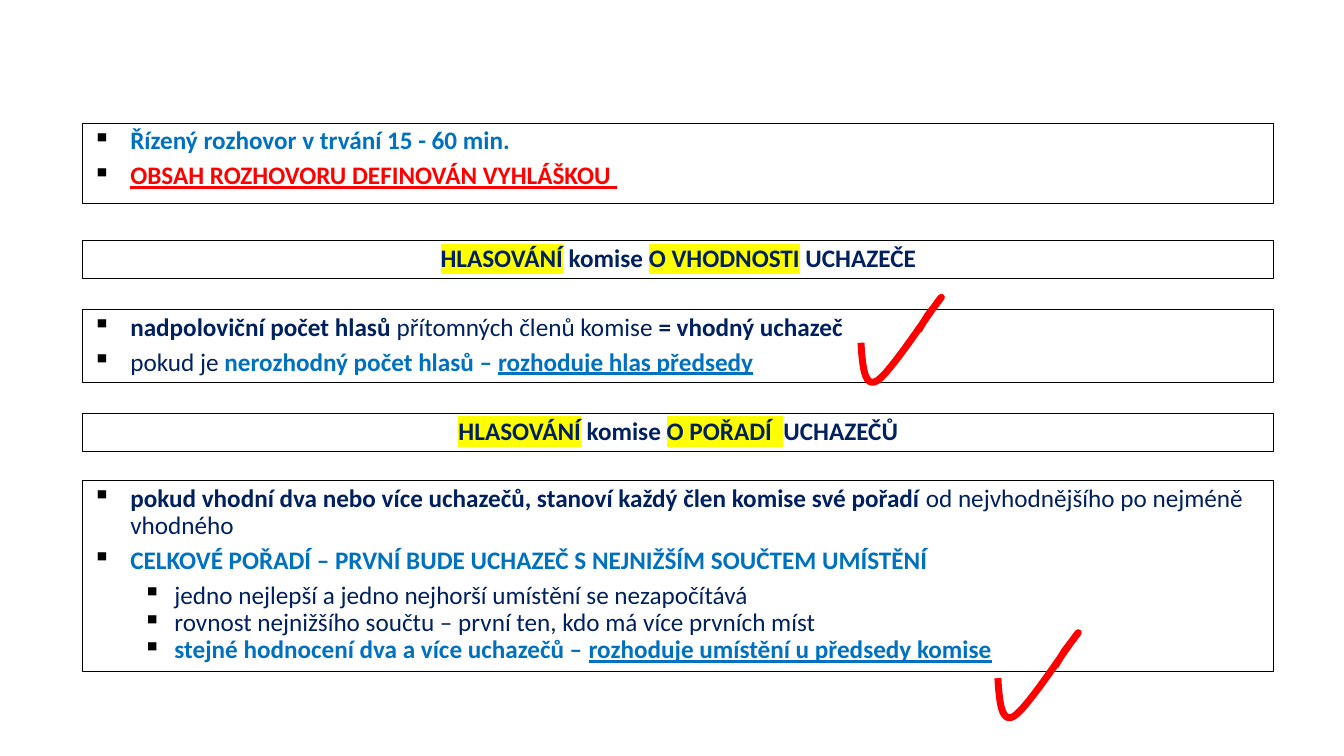
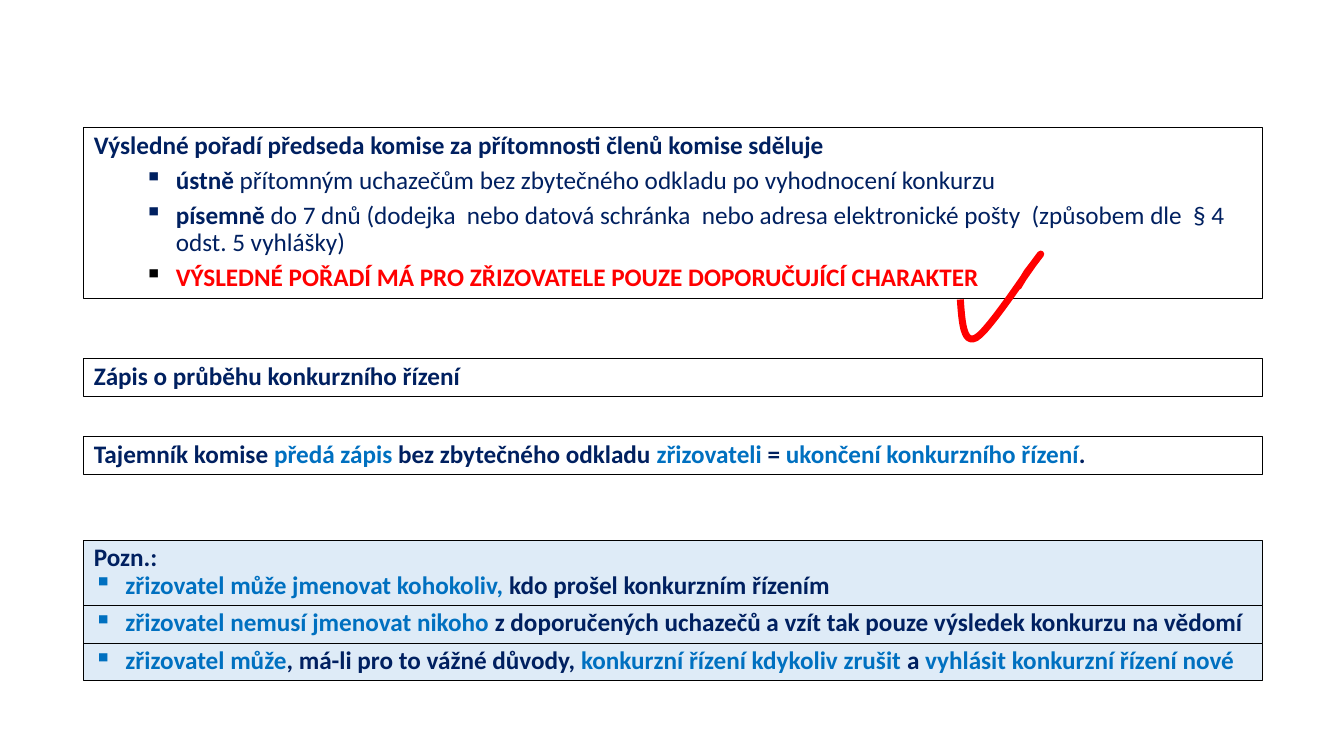
from lxml import etree
from pptx import Presentation
from pptx import util as u
from pptx.dml.color import RGBColor
from pptx.enum import shapes, text
from pptx.oxml.ns import qn

Pt = u.Pt
FONT = "Calibri"
COLORS = {
    "navy": "002060", "blue": "0070C0", "red": "FF0000", "black": "000000",
    "white": "FFFFFF", "pale": "DEEBF7", "yellow": "FFFF00",
}

# Run styles: colour, highlight and font attributes
STYLES = {
    "plain": ("navy", None, {"bold": False}),
    "bold": ("navy", None, {"bold": True}),
    "marked": ("navy", "yellow", {"bold": True}),
    "blue": ("blue", None, {"bold": True}),
    "blue_line": ("blue", None, {"bold": True, "underline": True}),
    "red": ("red", None, {"bold": True}),
    "red_line": ("red", None, {"bold": True, "underline": True}),
}

# Paragraph kinds: level, left margin, hanging indent, bullet colour
KINDS = {
    "text": (0, 0, 0, None),
    "centred": (0, 0, 0, None),
    "bullet": (0, 27, 27, "black"),
    "sub": (1, 58.5, 22.5, None),
    "sub_black": (1, 58.5, 22.5, "black"),
    "note": (0, 22.5, 22.5, None),
}
GAP = 5.5        # space between separated paragraphs
ROW = 27         # height of a one-line box

# Check mark outline, relative to its top left corner
TICK_START = (0, 32.4)
TICK_CURVES = [
    ((1.1, 48.6), (2.2, 64.6), (11.2, 59.8)),
    ((20.5, 54.7), (49.8, 9.4), (56, 1.7)),
    ((61.9, -5.8), (47.5, 13), (47.5, 13)),
]
TICK_END = (41, 23.8)


def rgb(name):
    return RGBColor.from_string(COLORS[name])


def set_all(target, values):
    for name, value in values.items():
        setattr(target, name, value)


def add_color(parent, tag, name):
    holder = etree.SubElement(parent, qn(tag))
    etree.SubElement(holder, qn("a:srgbClr"), val=COLORS[name])


def add_run(paragraph, style, words):
    color, highlight, values = STYLES[style]
    run = paragraph.add_run()
    run.text = words
    run.font.color.rgb = rgb(color)
    if highlight:
        add_color(run.font._element, "a:highlight", highlight)
    set_all(run.font, {"name": FONT, "size": Pt(18), **values})


def format_paragraph(paragraph, kind, gap):
    level, margin, hang, bullet_color = KINDS[kind]
    align = text.PP_ALIGN.CENTER if kind == "centred" else text.PP_ALIGN.LEFT
    set_all(paragraph, {"level": level, "alignment": align,
                        "line_spacing": 0.9, "space_before": Pt(gap)})
    props = paragraph._p.get_or_add_pPr()
    props.set("marL", str(Pt(margin)))
    props.set("indent", str(-Pt(hang)))
    if hang:
        if bullet_color:
            add_color(props, "a:buClr", bullet_color)
        etree.SubElement(props, qn("a:buChar"), char="▪")


def add_box(slide, left, top, width, height, items, fill="white"):
    """Draw a framed box; each item is (kind, space before, runs)."""
    box = slide.shapes.add_shape(shapes.MSO_SHAPE.RECTANGLE,
                                 Pt(left), Pt(top), Pt(width), Pt(height))
    box.shadow.inherit = False
    box.fill.solid()
    box.fill.fore_color.rgb = rgb(fill)
    box.line.color.rgb = rgb("black")
    box.line.width = Pt(0.75)
    frame = box.text_frame
    set_all(frame, {"word_wrap": True, "vertical_anchor": text.MSO_ANCHOR.TOP})
    for index, (kind, gap, runs) in enumerate(items):
        paragraph = frame.add_paragraph() if index else frame.paragraphs[0]
        format_paragraph(paragraph, kind, gap)
        for style, words in runs:
            add_run(paragraph, style, words)


def curve_points(start, first, second, end, steps=12):
    for step in range(1, steps + 1):
        t = step / steps
        weights = ((1 - t) ** 3, 3 * t * (1 - t) ** 2, 3 * t * t * (1 - t), t ** 3)
        yield tuple(sum(w * point[axis] for w, point in
                        zip(weights, (start, first, second, end)))
                    for axis in (0, 1))


def add_tick(slide, left, top):
    points = [TICK_START]
    for curve in TICK_CURVES:
        points.extend(curve_points(points[-1], *curve))
    points.append(TICK_END)
    places = [(Pt(left + x), Pt(top + y)) for x, y in points]
    builder = slide.shapes.build_freeform(*places[0])
    builder.add_line_segments(places[1:], close=False)
    tick = builder.convert_to_shape()
    tick.shadow.inherit = False
    tick.fill.background()
    tick.line.color.rgb = rgb("red")
    tick.line.width = Pt(5)


def build_voting(slide):
    left, width = 59, 851
    interview = [
        ("bullet", 0, [("blue", "Řízený rozhovor v trvání 15 - 60 min.")]),
        ("bullet", GAP, [("red_line", "OBSAH ROZHOVORU DEFINOVÁN VYHLÁŠKOU ")]),
    ]
    suitability_title = [("centred", 0, [
        ("marked", "HLASOVÁNÍ"), ("bold", " komise "),
        ("marked", "O VHODNOSTI"), ("bold", " UCHAZEČE")])]
    suitability = [
        ("bullet", 0, [("bold", "nadpoloviční počet hlasů "),
                       ("plain", "přítomných členů komise "),
                       ("bold", "= vhodný uchazeč")]),
        ("bullet", GAP, [("plain", "pokud je "),
                         ("blue", "nerozhodný počet hlasů – "),
                         ("blue_line", "rozhoduje hlas předsedy")]),
    ]
    ranking_title = [("centred", 0, [
        ("marked", "HLASOVÁNÍ"), ("bold", " komise "),
        ("marked", "O POŘADÍ  "), ("bold", "UCHAZEČŮ")])]
    ranking = [
        ("bullet", 0, [
            ("bold", "pokud vhodní dva nebo více uchazečů, stanoví každý člen "
                     "komise své pořadí "),
            ("plain", "od nejvhodnějšího po nejméně vhodného")]),
        ("bullet", GAP, [("blue", "CELKOVÉ POŘADÍ – PRVNÍ BUDE UCHAZEČ "
                                  "S NEJNIŽŠÍM SOUČTEM UMÍSTĚNÍ")]),
        ("sub_black", GAP, [
            ("plain", "jedno nejlepší a jedno nejhorší umístění se nezapočítává")]),
        ("sub_black", 0, [
            ("plain", "rovnost nejnižšího součtu – první ten, kdo má více prvních míst")]),
        ("sub_black", 0, [
            ("blue", "stejné hodnocení dva a více uchazečů – "),
            ("blue_line", "rozhoduje umístění u předsedy komise")]),
    ]
    for top, height, items in [
            (88, 57.5, interview), (172, ROW, suitability_title),
            (221, 52, suitability), (295.2, ROW, ranking_title),
            (343.4, 136, ranking)]:
        add_box(slide, left, top, width, height, items)
    add_tick(slide, 615, 212.4)
    add_tick(slide, 712.8, 452)


def build_result(slide):
    left, width = 60, 842
    announcement = [
        ("text", 0, [("bold", "Výsledné pořadí předseda komise za přítomnosti "
                              "členů komise sděluje")]),
        ("sub", GAP, [("bold", "ústně"),
                      ("plain", " přítomným uchazečům bez zbytečného odkladu "
                                "po vyhodnocení konkurzu")]),
        ("sub", GAP, [("bold", "písemně"),
                      ("plain", " do 7 dnů (dodejka  nebo datová schránka  nebo "
                                "adresa elektronické pošty  (způsobem dle  § 4 "
                                "odst. 5 vyhlášky)")]),
        ("sub_black", GAP, [("red", "VÝSLEDNÉ POŘADÍ MÁ PRO ZŘIZOVATELE POUZE "
                                    "DOPORUČUJÍCÍ CHARAKTER")]),
    ]
    record = [("text", 0, [("bold", "Zápis o průběhu konkurzního řízení")])]
    handover = [("text", 0, [
        ("bold", "Tajemník komise "), ("blue", "předá zápis "),
        ("bold", "bez zbytečného odkladu "), ("blue", "zřizovateli"),
        ("bold", " = "), ("blue", "ukončení konkurzního řízení"), ("bold", ".")])]
    for top, height, items in [(91.4, 121.7, announcement),
                               (256.3, ROW, record), (311.8, ROW, handover)]:
        add_box(slide, left, top, width, height, items)

    # Notes stacked under one another
    anyone = [
        ("text", 0, [("bold", "Pozn.:")]),
        ("note", 0, [("blue", "zřizovatel může jmenovat kohokoliv, "),
                     ("bold", "kdo prošel konkurzním řízením")]),
    ]
    nobody = [("note", 0, [
        ("blue", "zřizovatel nemusí jmenovat nikoho "),
        ("bold", "z doporučených uchazečů a vzít tak pouze výsledek konkurzu "
                 "na vědomí")])]
    cancel = [("note", 0, [
        ("blue", "zřizovatel může"), ("bold", ", má-li pro to vážné důvody, "),
        ("blue", "konkurzní řízení kdykoliv zrušit "), ("bold", "a"),
        ("blue", " vyhlásit konkurzní řízení nové")])]
    top = 385.8
    for height, items in [(46.5, anyone), (ROW, nobody), (ROW, cancel)]:
        add_box(slide, left, top, width, height, items, fill="pale")
        top += height
    add_tick(slide, 686, 181.5)


def main():
    deck = Presentation()
    deck.slide_width, deck.slide_height = Pt(960), Pt(540)
    for build in (build_voting, build_result):
        build(deck.slides.add_slide(deck.slide_layouts[6]))
    deck.save("out.pptx")


if __name__ == "__main__":
    main()
